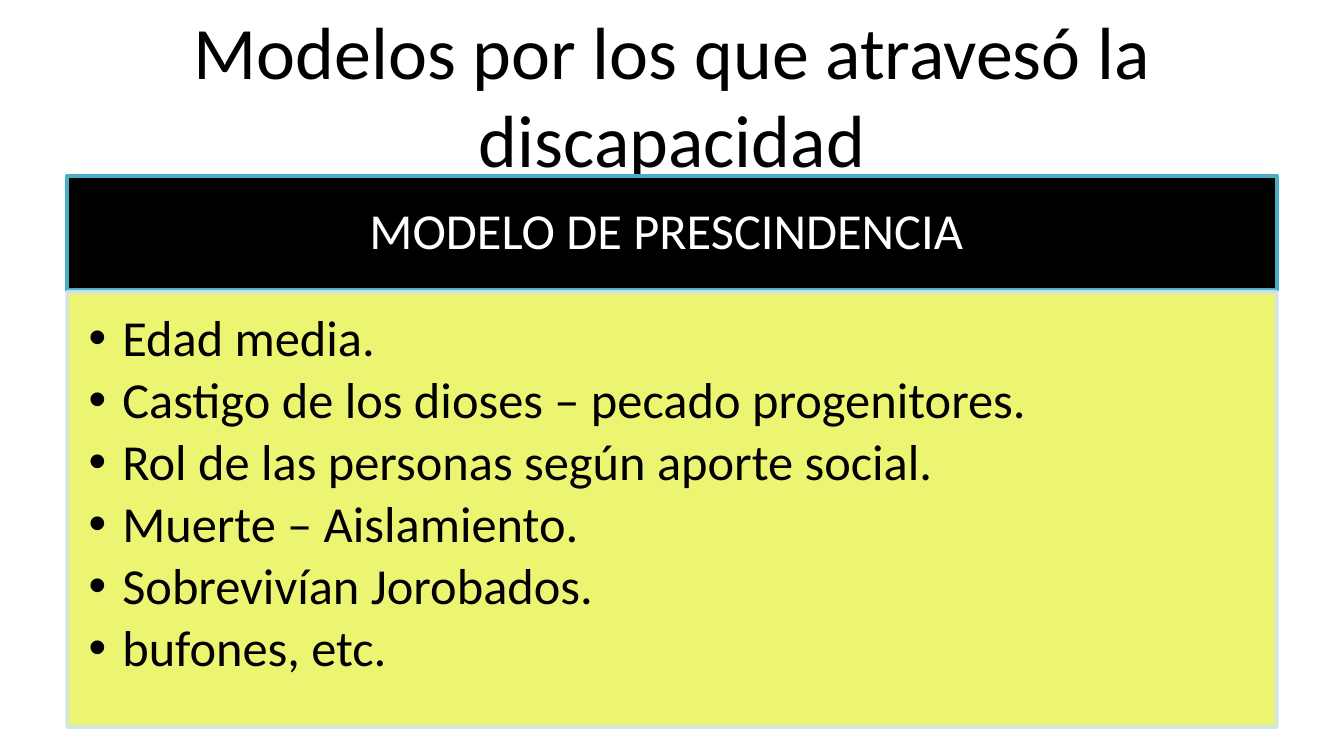
import lxml.etree
import pptx
import pptx.dml.color
import pptx.enum.shapes
import pptx.enum.text
import pptx.oxml.ns
import pptx.util

Inches = pptx.util.Inches
Pt = pptx.util.Pt
RGBColor = pptx.dml.color.RGBColor
Align = pptx.enum.text.PP_ALIGN
Anchor = pptx.enum.text.MSO_ANCHOR
qn = pptx.oxml.ns.qn

BLACK = RGBColor(0x00, 0x00, 0x00)
WHITE = RGBColor(0xFF, 0xFF, 0xFF)
TEAL = RGBColor(0x4B, 0xAC, 0xC6)
PALE_BLUE = RGBColor(0xD0, 0xE3, 0xEA)
YELLOW = RGBColor(0xEA, 0xF4, 0x62)

FONT = "Calibri"
LEFT = 0.5
WIDTH = 9
TITLE = "Modelos por los que atravesó la discapacidad"
HEADING = "MODELO DE PRESCINDENCIA "
TRAITS = [
    "Edad media.",
    "Castigo de los dioses – pecado progenitores.",
    "Rol de las personas según aporte social.",
    "Muerte – Aislamiento.",
    "Sobrevivían Jorobados.",
    "bufones, etc.",
]


def place(box, top, height):
    """Put a box in the slide's single column."""
    box.left, box.top = Inches(LEFT), Inches(top)
    box.width, box.height = Inches(WIDTH), Inches(height)


def paint(box, fill, line):
    """Give a box a solid fill and a two-point outline."""
    box.fill.solid()
    box.fill.fore_color.rgb = fill
    box.line.color.rgb = line
    box.line.width = Pt(2)


def make_translucent(box, percent):
    """Set the opacity of a box's fill and outline."""
    for color in box._element.spPr.iter(qn("a:srgbClr")):
        alpha = lxml.etree.SubElement(color, qn("a:alpha"))
        alpha.set("val", str(percent * 1000))


def set_frame(frame, anchor, insets):
    """Set wrapping, anchor and insets of a text frame."""
    frame.auto_size = pptx.enum.text.MSO_AUTO_SIZE.NONE
    frame.word_wrap = True
    frame.vertical_anchor = anchor
    frame.margin_left, frame.margin_top, frame.margin_right, frame.margin_bottom = map(Inches, insets)


def format_para(para, size, color, align):
    """Style a paragraph and its runs."""
    para.alignment = align
    for span in para.runs:
        span.font.name = FONT
        span.font.size = Pt(size)
        span.font.color.rgb = color


def add_bullet(para):
    """Give a paragraph a round bullet with a hanging indent."""
    properties = para._p.get_or_add_pPr()
    properties.set("marL", str(Inches(0.25)))
    properties.set("indent", str(Inches(-0.25)))
    bullet = lxml.etree.SubElement(properties, qn("a:buChar"))
    bullet.set("char", "•")


def fill_title(box):
    """Write the slide title."""
    place(box, 0.23, 0.94)
    box.text_frame.text = TITLE
    set_frame(box.text_frame, Anchor.MIDDLE, (0.1, 0.05, 0.1, 0.05))
    format_para(box.text_frame.paragraphs[0], 39.6, BLACK, Align.CENTER)


def add_heading(page):
    """Draw the black heading bar and return it."""
    bar = page.shapes.add_shape(
        pptx.enum.shapes.MSO_SHAPE.RECTANGLE,
        Inches(LEFT), Inches(1.31), Inches(WIDTH), Inches(0.85),
    )
    bar.shadow.inherit = False
    paint(bar, BLACK, TEAL)
    bar.text_frame.text = HEADING
    set_frame(bar.text_frame, Anchor.MIDDLE, (0.21, 0.12, 0.21, 0.12))
    para = bar.text_frame.paragraphs[0]
    para.line_spacing = 0.9
    format_para(para, 27, WHITE, Align.CENTER)
    return bar


def fill_list(box):
    """Write the bulleted list on its yellow panel."""
    place(box, 2.17, 3.24)
    paint(box, YELLOW, PALE_BLUE)
    make_translucent(box, 90)
    frame = box.text_frame
    frame.text = "\n".join(TRAITS)
    set_frame(frame, Anchor.TOP, (0.16, 0.16, 0.21, 0.24))
    for para in frame.paragraphs:
        para.line_spacing = 0.9
        para.space_before = Pt(0)
        para.space_after = Pt(4)
        format_para(para, 27, BLACK, Align.LEFT)
        add_bullet(para)


def main():
    """Build and save the slide."""
    deck = pptx.Presentation()
    deck.slide_width = Inches(10)
    deck.slide_height = deck.slide_width * 9 // 16
    page = deck.slides.add_slide(deck.slide_layouts[1])
    fill_title(page.shapes.title)
    panel = page.placeholders[1]
    fill_list(panel)
    heading = add_heading(page)
    panel._element.addprevious(heading._element)
    deck.save("out.pptx")


if __name__ == "__main__":
    main()
